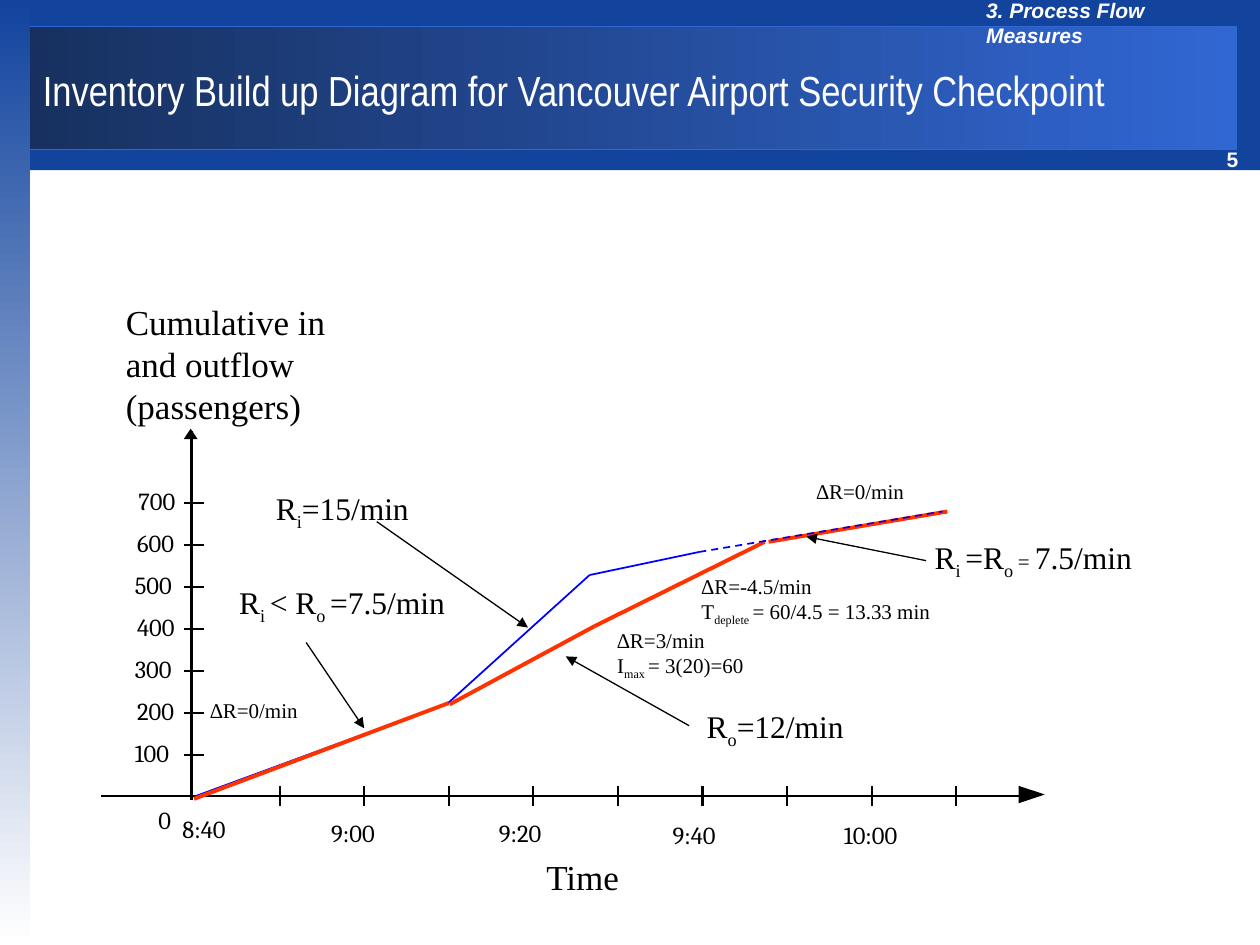
from pptx import Presentation
from pptx.dml.color import RGBColor
from pptx.enum import dml, shapes, text
from pptx.oxml.ns import qn
from pptx.util import Pt
from lxml import etree

COLORS = {
    "band": "12449E", "title_dark": "17305F", "title_light": "3167D3",
    "white": "FFFFFF", "black": "000000", "inflow": "0000FF", "outflow": "FF3300",
}
SERIF = "Times New Roman"
AXIS_FONT = "Cambria"


def rgb(name):
    return RGBColor.from_string(COLORS[name])


def add_text(slide, box, lines, size, font=SERIF, color="black", bold=False,
             italic=False, wrap=False, align=text.PP_ALIGN.LEFT):
    """Add a text box; every second piece between bars is a subscript."""
    shape = slide.shapes.add_textbox(*(Pt(value) for value in box))
    frame = shape.text_frame
    frame.word_wrap = wrap
    for index, line in enumerate(lines):
        paragraph = frame.add_paragraph() if index else frame.paragraphs[0]
        paragraph.alignment = align
        paragraph.font.size = Pt(size)
        paragraph.font.name = font
        paragraph.font.bold = bold
        paragraph.font.italic = italic
        paragraph.font.color.rgb = rgb(color)
        for position, piece in enumerate(line.split("|")):
            if piece:
                run = paragraph.add_run()
                run.text = piece
                if position % 2:
                    run._r.get_or_add_rPr().set("baseline", "-25000")
    return frame


def add_line(slide, start, end, color="black", width=1.0, arrow=False, dash=False):
    line = slide.shapes.add_connector(
        shapes.MSO_CONNECTOR.STRAIGHT, *(Pt(value) for value in (*start, *end)))
    line.line.color.rgb = rgb(color)
    line.line.width = Pt(width)
    if dash:
        line.line.dash_style = dml.MSO_LINE.DASH
    properties = line._element.spPr
    if arrow:
        etree.SubElement(properties.find(qn("a:ln")), qn("a:tailEnd"), type="triangle")
    etree.SubElement(properties, qn("a:effectLst"))


def add_path(slide, points, **style):
    for start, end in zip(points, points[1:]):
        add_line(slide, start, end, **style)


def add_arrowhead(slide, points):
    builder = slide.shapes.build_freeform(*points[0], scale=Pt(1))
    builder.add_line_segments(points[1:], close=True)
    shape = builder.convert_to_shape()
    shape.shadow.inherit = False
    shape.fill.solid()
    shape.fill.fore_color.rgb = rgb("black")
    shape.line.fill.background()


def add_rectangle(slide, box, fill, angle=0, outline=None):
    """Fill with one colour, or with a gradient when two are given."""
    shape = slide.shapes.add_shape(
        shapes.MSO_SHAPE.RECTANGLE, *(Pt(value) for value in box))
    shape.shadow.inherit = False
    if len(fill) == 1:
        shape.fill.solid()
        shape.fill.fore_color.rgb = rgb(fill[0])
    else:
        shape.fill.gradient()
        shape.fill.gradient_angle = angle
        for stop, name in zip(shape.fill.gradient_stops, fill):
            stop.color.rgb = rgb(name)
    if outline:
        shape.line.color.rgb = rgb(outline)
        shape.line.width = Pt(0.75)
    else:
        shape.line.fill.background()


def add_header(slide, left, top, width, height):
    add_rectangle(slide, (left, top, width, height), ["band"])
    add_rectangle(slide, (left, top + 15, width - 13.5, 70.5),
                  ["title_dark", "title_light"], outline="title_light")
    # Side strip
    add_rectangle(slide, (0, top, 17.2, 540), ["band", "white"], angle=270)
    # Page number, chapter and title
    label = {"size": 12, "font": "Arial", "color": "white", "bold": True}
    add_text(slide, (left + 679.5, top + 80, 29, 21.8), ["5"], **label)
    add_text(slide, (left + 542, top - 5, 163.5, 21.8),
             ["3. Process Flow Measures"], italic=True, **label)
    title = add_text(slide, (left + 3, top + 29, 702.5, 45),
                     ["Inventory Build up Diagram for Vancouver Airport Security Checkpoint"],
                     24, font="Arial Narrow", color="white", wrap=True)
    title.vertical_anchor = text.MSO_ANCHOR.MIDDLE


def add_diagram(slide, left, top):
    def at(x, y):
        return left + x, top + y

    def points(pairs):
        return [at(*pair) for pair in pairs]

    # Axes
    add_arrowhead(slide, points([(538.9, 286.4), (524.5, 291.4), (524.5, 281.3)]))
    add_line(slide, at(535, 287), at(0, 287), width=1.25)
    add_arrowhead(slide, points([(51, 76.8), (55, 83.3), (47, 83.3)]))
    add_line(slide, at(51.4, 78.2), at(51.4, 289.2), width=1.25)

    # Passenger scale
    add_text(slide, (*at(25.5, 288.5), 21.6, 23.8), ["0"], 14, AXIS_FONT, wrap=True)
    for index, x in enumerate((12, 13.3, 12, 13.3, 12, 13.3, 14)):
        rise = 24 * index
        add_line(slide, at(47.2, 263.3 - rise), at(58.8, 263.3 - rise))
        add_text(slide, (*at(x, 250.4 - rise), 43.2, 23.8),
                 [str(100 * (index + 1))], 14, AXIS_FONT, wrap=True)

    # Time scale
    for index in range(9):
        x = 101.8 + 48.33 * index
        add_line(slide, at(x, 281.3), at(x, 292.8), width=1.25)
    for label, x, y in (("8:40", 39.2, 293.5), ("9:00", 124.2, 295.7),
                        ("9:20", 220, 295.7), ("9:40", 319.3, 297.1),
                        ("10:00", 417.2, 297.1)):
        add_text(slide, (*at(x, y), 53.3, 23.8), [label], 14, AXIS_FONT, wrap=True)

    # Axis titles
    add_text(slide, (*at(6.8, 0), 144.7, 79.2),
             ["Cumulative in and outflow (passengers)"], 20, wrap=True)
    add_text(slide, (*at(202.6, 317.3), 144.7, 31), ["Time"], 20,
             wrap=True, align=text.PP_ALIGN.CENTER)

    # Cumulative inflow and outflow
    add_path(slide, points([(53.6, 287), (198, 233.8), (278.9, 160.6), (341.6, 147.4)]),
             color="inflow")
    add_path(slide, points([(52.9, 288.5), (198.3, 233.8)]), color="outflow", width=2.25)
    add_path(slide, points([(199, 234.5), (281.8, 189.8), (379, 141.6)]),
             color="outflow", width=2.25)
    add_path(slide, points([(381.2, 141.6), (483.4, 124.3)]), color="outflow", width=2.25)
    add_path(slide, points([(341.6, 147.4), (480.6, 124.3)]), color="inflow", dash=True)

    # Flow rates with their pointers
    rates = (
        ("R|i|=15/min", (92.5, 107.8), 134, (157.3, 130.1), (243.7, 190.6)),
        ("R|o|=12/min", (338.7, 232.3), 93.6, (335.8, 246.7), (265.3, 207.1)),
        ("R|i |=R|o |= ||7.5/min", (469, 135.8), 131, (471.2, 152.4), (402.8, 138.7)),
        ("R|i |< R|o |=7.5/min", (71.6, 161.8), 132.5, (117, 199.2), (150.1, 248.2)),
    )
    for label, corner, width, start, end in rates:
        frame = add_text(slide, (*at(*corner), width, 28.8), [label], 18)
        for run in frame.paragraphs[0].runs:
            if run.text == "= ":
                run.font.size = Pt(12)
        add_line(slide, at(*start), at(*end), width=0.75, arrow=True)

    # Net rates
    for lines, corner, width in (
        (["∆R=0/min"], (55, 227.3), 64.8),
        (["∆R=3/min", "I|max |= 3(20)=60"], (287.6, 187), 88.6),
        (["∆R=-4.5/min", "T|deplete |= 60/4.5 = 13.33 min"], (335.8, 156), 148.3),
        (["∆R=0/min"], (401.4, 102), 64.8),
    ):
        add_text(slide, (*at(*corner), width, 7.2 + 14.4 * len(lines)), lines, 12)


def main():
    presentation = Presentation()
    presentation.slide_width = Pt(720)
    presentation.slide_height = Pt(540)
    slide = presentation.slides.add_slide(presentation.slide_layouts[6])
    add_header(slide, 14.4, 0, 705.6, 97.2)
    add_diagram(slide, 58, 168)
    presentation.save("out.pptx")


if __name__ == "__main__":
    main()
